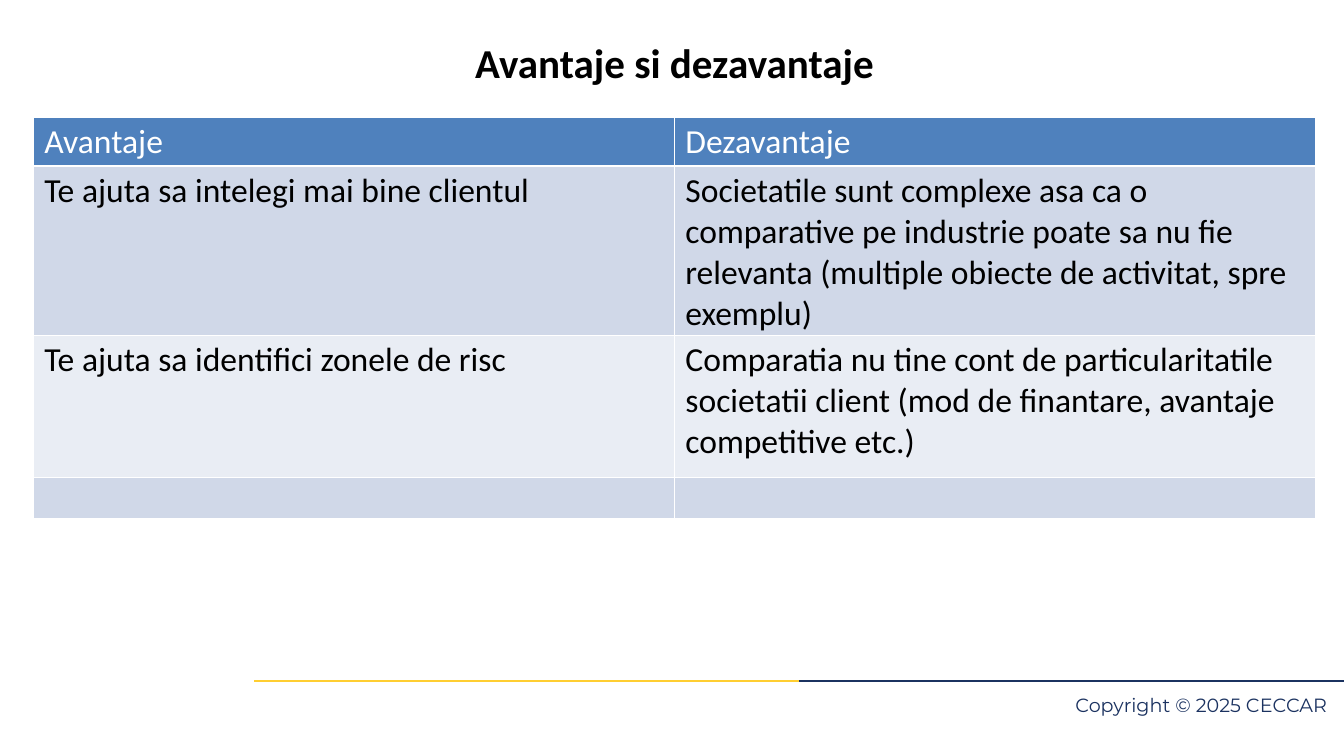
from dataclasses import dataclass

from lxml.etree import SubElement
from pptx import Presentation
from pptx.dml.color import RGBColor
from pptx.enum.shapes import MSO_CONNECTOR
from pptx.enum.text import MSO_ANCHOR, PP_ALIGN
from pptx.oxml.ns import qn
from pptx.util import Inches, Pt


@dataclass(frozen=True)
class Theme:
    body_font: str = "Calibri"
    footer_font: str = "Montserrat"
    title_size: float = 44
    table_size: float = 36
    footer_size: float = 20.5
    rule_width: float = 2.25
    black: str = "000000"
    white: str = "FFFFFF"
    navy: str = "1B3260"
    yellow: str = "FFCE31"
    header: str = "4F81BD"
    bands: tuple = ("D0D8E8", "E9EDF4")


THEME = Theme()
WIDTH, HEIGHT = Inches(20), Inches(11.25)
MARGIN = Inches(0.5)
CONTENT_WIDTH = Inches(19.08)
ROW_HEIGHTS = (0.61, 2.11, 2.11, 0.61)
COMPARISON = [
    ("Avantaje", "Dezavantaje"),
    ("Te ajuta sa intelegi mai bine clientul",
     "Societatile sunt complexe asa ca o comparative pe industrie poate sa nu fie "
     "relevanta (multiple obiecte de activitat, spre exemplu)"),
    ("Te ajuta sa identifici zonele de risc",
     "Comparatia nu tine cont de particularitatile societatii client "
     "(mod de finantare, avantaje competitive etc.)"),
    ("", ""),
]


def style(paragraph, font, size, color, bold=False):
    paragraph.font.name = font
    paragraph.font.size = Pt(size)
    paragraph.font.bold = bold
    paragraph.font.color.rgb = RGBColor.from_string(color)


def add_title(slide, box, text):
    title = slide.shapes.title
    title.left, title.top, title.width, title.height = box
    title.text_frame.text = text
    title.text_frame.vertical_anchor = MSO_ANCHOR.MIDDLE
    heading = title.text_frame.paragraphs[0]
    heading.alignment = PP_ALIGN.CENTER
    style(heading, THEME.body_font, THEME.title_size, THEME.black, bold=True)


def add_borders(cell, bottom_width):
    properties = cell._tc.get_or_add_tcPr()
    for side, width in (("L", 1), ("R", 1), ("T", 1), ("B", bottom_width)):
        border = SubElement(properties, qn(f"a:ln{side}"), w=str(Pt(width)))
        fill = SubElement(border, qn("a:solidFill"))
        SubElement(fill, qn("a:srgbClr"), val=THEME.white)


def fill_cell(cell, text, row):
    is_header = row == 0
    add_borders(cell, 3 if is_header else 1)
    cell.fill.solid()
    band = THEME.header if is_header else THEME.bands[(row - 1) % 2]
    cell.fill.fore_color.rgb = RGBColor.from_string(band)
    if text:
        cell.margin_left = cell.margin_right = Inches(0.16)
        cell.margin_top = cell.margin_bottom = Inches(0.06)
        cell.text = text
        color = THEME.white if is_header else THEME.black
        style(cell.text_frame.paragraphs[0], THEME.body_font, THEME.table_size, color)


def add_comparison(slide, box, rows):
    table = slide.shapes.add_table(len(rows), len(rows[0]), *box).table
    for column in table.columns:
        column.width = box[2] // len(rows[0])
    for row, (texts, height) in enumerate(zip(rows, ROW_HEIGHTS)):
        table.rows[row].height = Inches(height)
        for column, text in enumerate(texts):
            fill_cell(table.cell(row, column), text, row)


def add_rule(slide, start, end, y, color):
    rule = slide.shapes.add_connector(MSO_CONNECTOR.STRAIGHT, start, y, end, y)
    rule.line.color.rgb = RGBColor.from_string(color)
    rule.line.width = Pt(THEME.rule_width)
    SubElement(rule._element.spPr, qn("a:effectLst"))


def add_footer(slide, box, text):
    left, top, width, height = box
    joint = left + int(width * 0.5)
    add_rule(slide, joint, left + width, top, THEME.navy)
    add_rule(slide, left, joint, top, THEME.yellow)

    note_width = Inches(5.58)
    note = slide.shapes.add_textbox(
        left + width - note_width - Inches(0.25), top + Inches(0.23),
        note_width, Inches(0.3))
    frame = note.text_frame
    frame.word_wrap = True
    frame.margin_left = frame.margin_right = frame.margin_top = frame.margin_bottom = 0
    frame.text = text
    notice = frame.paragraphs[0]
    notice.alignment = PP_ALIGN.RIGHT
    notice.line_spacing = Pt(THEME.footer_size)
    style(notice, THEME.footer_font, THEME.footer_size, THEME.navy)


def main():
    deck = Presentation()
    deck.slide_width, deck.slide_height = WIDTH, HEIGHT
    slide = deck.slides.add_slide(deck.slide_layouts[5])
    footer_left, footer_top = Inches(3.78), Inches(10.14)
    add_footer(slide, (footer_left, footer_top, WIDTH - footer_left, HEIGHT - footer_top),
               "Copyright © 2025 CECCAR")
    add_title(slide, (MARGIN, Inches(0.3), CONTENT_WIDTH, Inches(1.25)),
              "Avantaje si dezavantaje")
    add_comparison(slide, (MARGIN, Inches(1.75), CONTENT_WIDTH, Inches(sum(ROW_HEIGHTS))),
                   COMPARISON)
    deck.save("out.pptx")


if __name__ == "__main__":
    main()
